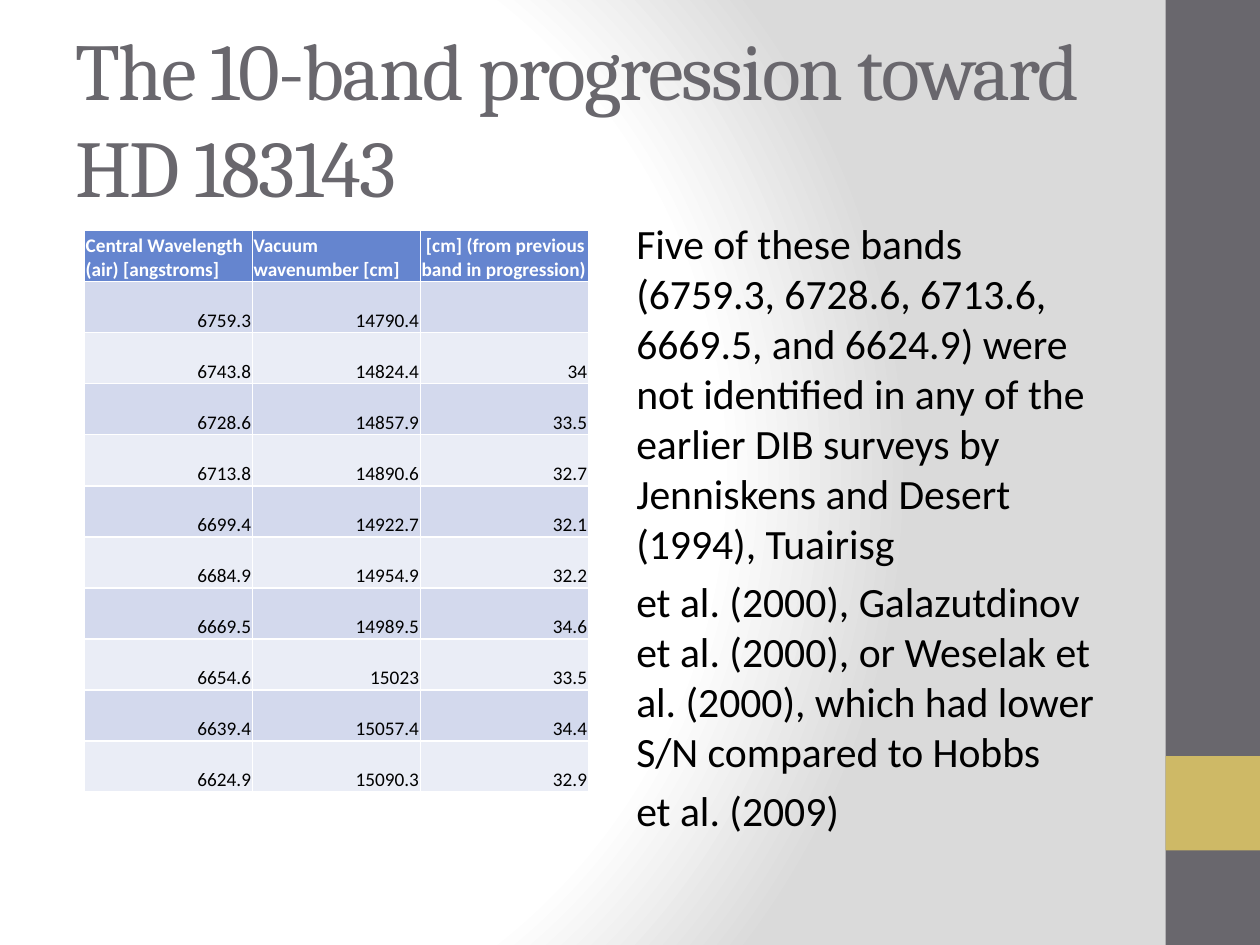
from pptx import Presentation, util as u
from pptx.dml.color import RGBColor
from pptx.enum import shapes, text
from pptx.oxml import parse_xml
from pptx.oxml.ns import nsdecls

SLATE, GOLD, WHITE, BLACK = "69676D", "CEB966", "FFFFFF", "000000"
HEADER_BLUE, BAND_DARK, BAND_LIGHT = "6585CF", "D3D9ED", "EAEDF6"


def color(value):
    return RGBColor.from_string(value)


def set_font(paragraph, name, size, value, bold=False):
    font = paragraph.font
    font.name, font.size, font.bold = name, u.Pt(size), bold
    font.color.rgb = color(value)


deck = Presentation()
deck.slide_width, deck.slide_height = u.Inches(10), u.Inches(7.5)
page = deck.slides.add_slide(deck.slide_layouts[6])

# Background: white glow fading to grey
page.background.fill.gradient()
gradient = page.element.find(".//{*}bgPr/{*}gradFill")
gradient.getparent().replace(gradient, parse_xml(f"""
<a:gradFill {nsdecls('a')} rotWithShape="1">
  <a:gsLst>
    <a:gs pos="0"><a:srgbClr val="FFFFFF"/></a:gs>
    <a:gs pos="75000"><a:srgbClr val="FFFFFF"/></a:gs>
    <a:gs pos="100000"><a:srgbClr val="DADADA"/></a:gs>
  </a:gsLst>
  <a:path path="circle">
    <a:fillToRect l="20000" t="50000" r="100000" b="50000"/>
  </a:path>
</a:gradFill>"""))

# Side band with its gold block
for top, height, fill in [(0, 7.5, SLATE), (6, 0.75, GOLD)]:
    band = page.shapes.add_shape(
        shapes.MSO_SHAPE.RECTANGLE,
        u.Inches(9.25), u.Inches(top), u.Inches(0.75), u.Inches(height))
    band.shadow.inherit = False
    band.fill.solid()
    band.fill.fore_color.rgb = color(fill)
    band.line.fill.background()

# Title
title = page.shapes.add_textbox(
    u.Inches(0.5), u.Inches(0.3), u.Inches(8.33), u.Inches(1.25)).text_frame
title.word_wrap = True
title.vertical_anchor = text.MSO_ANCHOR.MIDDLE
title.text = "The 10-band progression toward HD 183143"
set_font(title.paragraphs[0], "Cambria", 46, SLATE)
title.paragraphs[0].runs[0].font._element.set("spc", "-100")

# Band table
rows = [
    ("Central Wavelength (air) [angstroms]", "Vacuum wavenumber [cm]",
     " [cm] (from previous band in progression)"),
    ("6759.3", "14790.4", ""),
    ("6743.8", "14824.4", "34"),
    ("6728.6", "14857.9", "33.5"),
    ("6713.8", "14890.6", "32.7"),
    ("6699.4", "14922.7", "32.1"),
    ("6684.9", "14954.9", "32.2"),
    ("6669.5", "14989.5", "34.6"),
    ("6654.6", "15023", "33.5"),
    ("6639.4", "15057.4", "34.4"),
    ("6624.9", "15090.3", "32.9"),
]
table = page.shapes.add_table(
    len(rows), len(rows[0]),
    u.Inches(0.67), u.Inches(1.83), u.Inches(4), u.Inches(4.46)).table
for row_index, row in enumerate(rows):
    is_header = row_index == 0
    band_fill = BAND_DARK if row_index % 2 else BAND_LIGHT
    for column_index, value in enumerate(row):
        cell = table.cell(row_index, column_index)
        cell.text = value
        cell.vertical_anchor = text.MSO_ANCHOR.BOTTOM
        cell.margin_left = cell.margin_top = cell.margin_right = u.Inches(0.01)
        cell.margin_bottom = 0
        cell.fill.solid()
        cell.fill.fore_color.rgb = color(HEADER_BLUE if is_header else band_fill)
        para = cell.text_frame.paragraphs[0]
        set_font(para, "Calibri", 11, WHITE if is_header else BLACK, is_header)
        if not is_header:
            para.alignment = text.PP_ALIGN.RIGHT

# Commentary
body = page.shapes.add_textbox(
    u.Inches(4.83), u.Inches(1.68), u.Inches(4), u.Inches(5.02)).text_frame
body.word_wrap = True
body.margin_left = u.Inches(0.22)
body.text = "\n".join([
    "Five of these bands (6759.3, 6728.6, 6713.6, 6669.5, and 6624.9) were not "
    "identified in any of the earlier DIB surveys by Jenniskens and Desert "
    "(1994), Tuairisg",
    "et al. (2000), Galazutdinov et al. (2000), or Weselak et al. (2000), "
    "which had lower S/N compared to Hobbs",
    "et al. (2009)",
])
for para in body.paragraphs:
    set_font(para, "Calibri", 23.8, BLACK)
    para.space_before = u.Pt(4.8)

deck.save("out.pptx")
